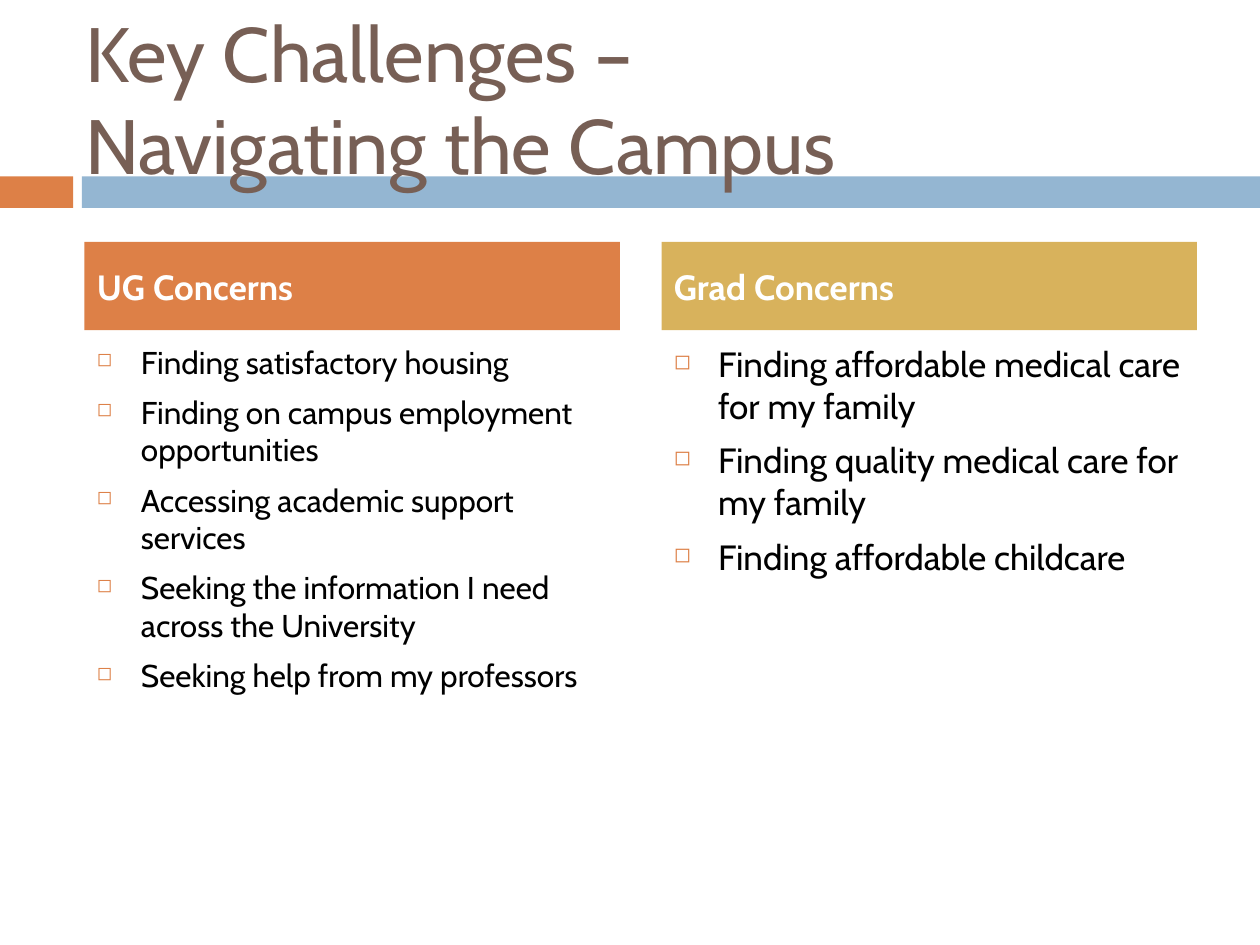
from dataclasses import dataclass

from lxml import etree
from pptx import Presentation
from pptx import util as u
from pptx.dml.color import RGBColor
from pptx.enum import shapes, text
from pptx.oxml import ns


@dataclass(frozen=True)
class Theme:
    """Colours, font and type sizes of the slide."""
    font: str = "Cabin"
    orange: str = "DD8047"
    blue: str = "94B6D2"
    gold: str = "D8B25C"
    brown: str = "775F55"
    white: str = "FFFFFF"
    black: str = "000000"
    title_size: int = 44
    header_size: int = 20
    paragraph_gap: int = 7


THEME = Theme()


def style_paragraph(paragraph, size, color, bold=False):
    """Set the font and left alignment of a paragraph."""
    paragraph.alignment = text.PP_ALIGN.LEFT
    paragraph.font.name = THEME.font
    paragraph.font.size = u.Pt(size)
    paragraph.font.bold = bold
    paragraph.font.color.rgb = RGBColor.from_string(color)


def add_bar(slide, box, color):
    """Add a plain filled rectangle."""
    bar = slide.shapes.add_shape(shapes.MSO_SHAPE.RECTANGLE, *map(u.Inches, box))
    bar.shadow.inherit = False
    bar.fill.solid()
    bar.fill.fore_color.rgb = RGBColor.from_string(color)
    bar.line.fill.background()
    return bar


def add_text_frame(slide, box, anchor):
    """Add a wrapping text box and return its text frame."""
    frame = slide.shapes.add_textbox(*map(u.Inches, box)).text_frame
    frame.word_wrap = True
    frame.vertical_anchor = anchor
    return frame


def add_bullet(paragraph):
    """Give a paragraph a hanging square bullet."""
    properties = paragraph._p.get_or_add_pPr()
    indent = u.Inches(0.35)
    properties.set("marL", str(indent))
    properties.set("indent", str(-indent))
    color = etree.SubElement(properties, ns.qn("a:buClr"))
    etree.SubElement(color, ns.qn("a:srgbClr"), val=THEME.orange)
    etree.SubElement(properties, ns.qn("a:buSzPct"), val="60000")
    etree.SubElement(properties, ns.qn("a:buChar"), char="◻")


def add_title(slide, box, title):
    """Place the slide title, centred vertically in its box."""
    frame = add_text_frame(slide, box, text.MSO_ANCHOR.MIDDLE)
    paragraph = frame.paragraphs[0]
    paragraph.text = title
    style_paragraph(paragraph, THEME.title_size, THEME.brown)


def add_band(slide, box):
    """Place the two-colour band across the box."""
    left, top, width, height = box
    accent, gap = 0.58, 0.07
    start = accent + gap
    add_bar(slide, (left, top, accent, height), THEME.orange)
    add_bar(slide, (left + start, top, width - start, height), THEME.blue)


def add_column(slide, box, heading, color, items, size):
    """Place a coloured heading with a bulleted list below it."""
    left, top, width, height = box
    header_height, gap = 0.7, 0.05
    header = add_bar(slide, (left, top, width, header_height), color)
    header.text_frame.vertical_anchor = text.MSO_ANCHOR.MIDDLE
    paragraph = header.text_frame.paragraphs[0]
    paragraph.text = heading
    style_paragraph(paragraph, THEME.header_size, THEME.white, bold=True)

    offset = header_height + gap
    list_box = (left, top + offset, width, height - offset)
    frame = add_text_frame(slide, list_box, text.MSO_ANCHOR.TOP)
    for index, item in enumerate(items):
        paragraph = frame.add_paragraph() if index else frame.paragraphs[0]
        paragraph.text = item
        add_bullet(paragraph)
        if index:
            paragraph.space_before = u.Pt(THEME.paragraph_gap)
        style_paragraph(paragraph, size, THEME.black)


def main():
    """Build and save the slide."""
    presentation = Presentation()
    presentation.slide_width = u.Inches(10)
    presentation.slide_height = u.Inches(7.5)
    slide = presentation.slides.add_slide(presentation.slide_layouts[6])

    add_band(slide, (0, 1.4, 10, 0.25))
    add_title(slide, (0.58, 0.3, 8.92, 0.95), "Key Challenges –\vNavigating the Campus")
    columns = [
        ("UG Concerns", THEME.orange, 18, [
            "Finding satisfactory housing",
            "Finding on campus employment opportunities",
            "Accessing academic support services",
            "Seeking the information I need across the University",
            "Seeking help from my professors",
        ]),
        ("Grad Concerns", THEME.gold, 20, [
            "Finding affordable medical care for my family",
            "Finding quality medical care for my family",
            "Finding affordable childcare",
        ]),
    ]
    for index, (heading, color, size, items) in enumerate(columns):
        box = (0.67 + index * 4.58, 1.92, 4.25, 4.67)
        add_column(slide, box, heading, color, items, size)
    presentation.save("out.pptx")


if __name__ == "__main__":
    main()
